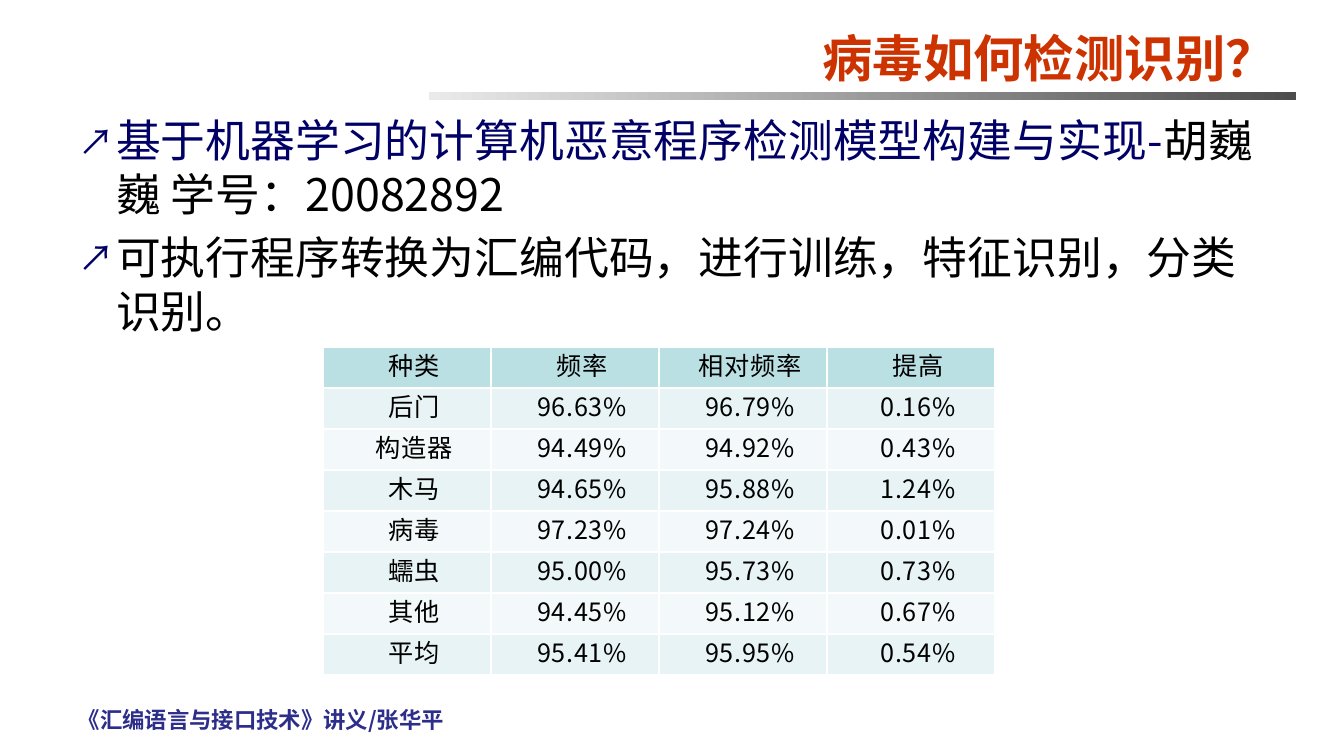
"""Build the slide on detecting and recognising viruses."""
from lxml import etree
from pptx import Presentation
from pptx import util as u
from pptx.dml.color import RGBColor
from pptx.enum import shapes, text
from pptx.oxml import ns

EMU_PER_PX = 914400 / 100.8
CJK = "Noto Sans CJK SC"
COLORS = {
    "title": "CC3300", "navy": "000066", "black": "000000", "footer": "2D2D8A",
    "bar_start": "EAEAEA", "bar_end": "4D4D4D", "white": "FFFFFF",
    "header": "BBE0E3", "odd": "E7F3F4", "even": "F3F9FA",
}
BULLETS = [
    [("基于机器学习的计算机恶意程序检测模型构建与实现-", "navy"),
     ("胡巍巍 学号：20082892", "black")],
    [("可执行程序转换为汇编代码，进行训练，特征识别，分类识别。", "black")],
]
RATES = [
    ("种类", "频率", "相对频率", "提高"),
    ("后门", "96.63%", "96.79%", "0.16%"),
    ("构造器", "94.49%", "94.92%", "0.43%"),
    ("木马", "94.65%", "95.88%", "1.24%"),
    ("病毒", "97.23%", "97.24%", "0.01%"),
    ("蠕虫", "95.00%", "95.73%", "0.73%"),
    ("其他", "94.45%", "95.12%", "0.67%"),
    ("平均", "95.41%", "95.95%", "0.54%"),
]


def px(length):
    """Turn pixels into EMU."""
    return u.Emu(round(length * EMU_PER_PX))


def rgb(name):
    """Look up a named colour."""
    return RGBColor.from_string(COLORS[name])


def add_xml(parent, tag, **attributes):
    """Append a drawing element to its parent."""
    return etree.SubElement(parent, ns.qn(tag), attributes)


def place(shape, left, top, width, height):
    """Move and size a shape in pixels."""
    shape.left, shape.top = px(left), px(top)
    shape.width, shape.height = px(width), px(height)


def style(span, size, color, font=CJK, bold=False):
    """Format a run of text."""
    span.font.size, span.font.bold = u.Pt(size), bold
    span.font.color.rgb = rgb(color)
    span.font.name = font
    add_xml(span.font._element, "a:ea", typeface=CJK)


def set_title(box):
    """Fill the title placeholder."""
    place(box, 418, 18, 868, 78)
    frame = box.text_frame
    frame.text = "病毒如何检测识别？"
    frame.auto_size = text.MSO_AUTO_SIZE.NONE
    frame.vertical_anchor = text.MSO_ANCHOR.MIDDLE
    para = frame.paragraphs[0]
    para.alignment = text.PP_ALIGN.RIGHT
    style(para.runs[0], 36, "title", "Arial", True)


def set_bullet(para):
    """Give a paragraph a hanging arrow bullet."""
    props = para._p.get_or_add_pPr()
    props.set("marL", str(px(38)))
    props.set("indent", str(px(-38)))
    color = add_xml(props, "a:buClr")
    add_xml(color, "a:srgbClr", val=COLORS["navy"])
    add_xml(props, "a:buSzPct", val="80000")
    add_xml(props, "a:buFont", typeface=CJK)
    add_xml(props, "a:buChar", char="↗")


def set_body(box):
    """Fill the body placeholder with the bullet list."""
    place(box, 68, 108, 1210, 567)
    frame = box.text_frame
    frame.auto_size = text.MSO_AUTO_SIZE.NONE
    for index, spans in enumerate(BULLETS):
        para = frame.add_paragraph() if index else frame.paragraphs[0]
        set_bullet(para)
        para.space_before = u.Pt(6.4 if index else 0)
        for words, color in spans:
            span = para.add_run()
            span.text = words
            style(span, 32, color)


def add_title_bar(page):
    """Draw the gradient bar under the title."""
    bar = page.shapes.add_shape(shapes.MSO_SHAPE.RECTANGLE, 0, 0, 0, 0)
    place(bar, 429, 92, 867, 8)
    bar.shadow.inherit = False
    bar.line.fill.background()
    bar.fill.gradient()
    bar.fill.gradient_angle = 0
    for stop, name in zip(bar.fill.gradient_stops, ("bar_start", "bar_end")):
        stop.color.rgb = rgb(name)


def add_footer(page):
    """Write the lecture name at the bottom."""
    box = page.shapes.add_textbox(0, 0, 0, 0)
    place(box, 68, 701, 394, 37)
    frame = box.text_frame
    frame.word_wrap = True
    frame.text = "《汇编语言与接口技术》讲义/张华平"
    style(frame.paragraphs[0].runs[0], 16, "footer", bold=True)


def set_cell(cell, words, fill):
    """Fill and format one table cell."""
    cell.text = words
    cell.vertical_anchor = text.MSO_ANCHOR.MIDDLE
    cell.margin_left = cell.margin_right = px(7)
    cell.margin_top = cell.margin_bottom = 0
    para = cell.text_frame.paragraphs[0]
    para.alignment = text.PP_ALIGN.CENTER
    para.line_spacing = u.Pt(22)
    para._p.get_or_add_pPr().set("indent", str(px(14)))
    span = para.runs[0]
    style(span, 18, "black", CJK if words.endswith("%") else "Calibri")
    span.font._element.set("spc", "50")
    props = cell._tc.get_or_add_tcPr()
    for side in ("a:lnL", "a:lnR", "a:lnT", "a:lnB"):
        line = add_xml(props, side, w=str(u.Pt(1)))
        solid = add_xml(line, "a:solidFill")
        add_xml(solid, "a:srgbClr", val=COLORS["white"])
    cell.fill.solid()
    cell.fill.fore_color.rgb = rgb(fill)


def add_rate_table(page):
    """Add the table of detection rates."""
    rows, columns = len(RATES), len(RATES[0])
    frame = page.shapes.add_table(
        rows, columns, px(323), px(347), px(168 * columns), px(41 * rows))
    table = frame.table
    table.first_row = table.horz_banding = False
    for row, values in enumerate(RATES):
        fill = "header" if row == 0 else "odd" if row % 2 else "even"
        for column, words in enumerate(values):
            set_cell(table.cell(row, column), words, fill)


def main():
    """Build and save the deck."""
    deck = Presentation()
    deck.slide_width, deck.slide_height = px(1344), px(756)
    page = deck.slides.add_slide(deck.slide_layouts[1])
    add_title_bar(page)
    add_footer(page)
    set_title(page.shapes.title)
    set_body(page.placeholders[1])
    add_rate_table(page)
    deck.save("out.pptx")


if __name__ == "__main__":
    main()
